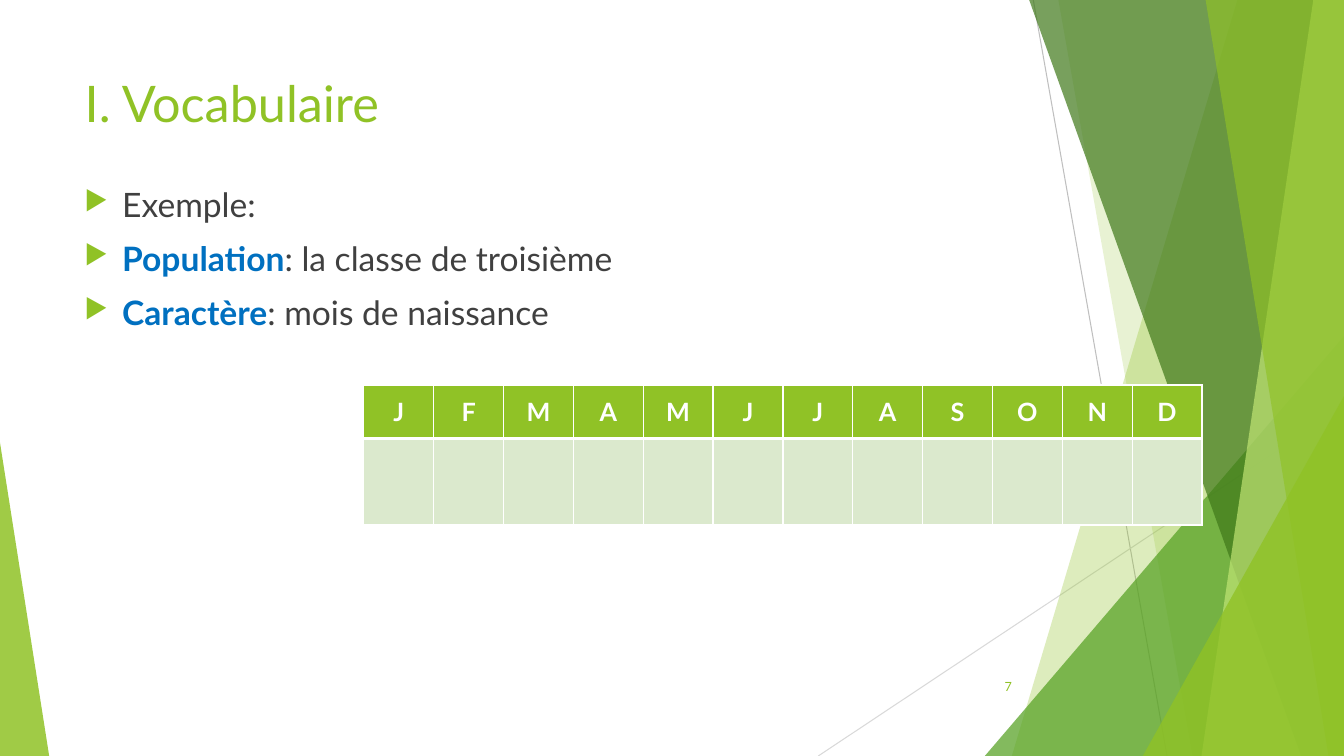
from dataclasses import dataclass

from lxml import etree
from pptx import Presentation
from pptx.dml.color import RGBColor
from pptx.enum import shapes, text
from pptx.oxml import ns
from pptx.util import Cm, Pt

COLORS = {
    "green": "90C226", "leaf": "54A021", "forest": "3F7819", "lime": "C0E474",
    "blue": "0070C0", "text": "404040", "white": "FFFFFF", "cell": "DBE9CD",
    "ray": "BFBFBF", "pale_ray": "D9D9D9",
}
FONT = "Lato"
WIDTH, HEIGHT = 33.87, 19.05
BLEED_TOP = -0.02


@dataclass(frozen=True)
class Ray:
    start: tuple[float, float]
    end: tuple[float, float]
    color: str


@dataclass(frozen=True)
class Panel:
    """A band reaching the right edge, with a slanted left side."""
    top_left: float
    bottom_left: float
    color: str
    opacity: int


@dataclass(frozen=True)
class Wedge:
    """A right triangle standing on the bottom edge."""
    left: float
    top: float
    width: float
    apex: int
    color: str
    opacity: int


DECOR = [
    Ray((26.04, 0), (29.41, HEIGHT), "ray"),
    Ray((WIDTH, 10.24), (20.62, HEIGHT), "pale_ray"),
    Panel(31.19, 25.5, "green", 30),
    Panel(26.67, 30.05, "green", 20),
    Wedge(24.82, 8.47, 9.05, 1, "leaf", 72),
    Panel(25.93, 32.79, "forest", 70),
    Panel(33.1, 30.28, "lime", 70),
    Panel(30.38, 33.48, "green", 65),
    Wedge(28.8, 9.98, 5.07, 1, "green", 80),
    Wedge(0, 11.15, 1.24, 0, "green", 85),
]
BULLETS = [
    [("Exemple:", "text", False)],
    [("Population", "blue", True), (": la classe de troisième", "text", False)],
    [("Caractère", "blue", True), (": mois de naissance", "text", False)],
]
MONTHS = "JFMAMJJASOND"


def rgb(name: str) -> RGBColor:
    return RGBColor.from_string(COLORS[name])


def add_xml(parent, tag: str, **attrs):
    return etree.SubElement(parent, ns.qn(tag), attrs)


def place(sp, left: float, top: float, width: float, height: float) -> None:
    box = {"left": left, "top": top, "width": width, "height": height}
    for name, value in box.items():
        setattr(sp, name, Cm(value))


def add_run(p, words: str, size: float, color: str, bold: bool = False) -> None:
    r = p.add_run()
    r.text = words
    for name, value in {"name": FONT, "size": Pt(size), "bold": bold}.items():
        setattr(r.font, name, value)
    r.font.color.rgb = rgb(color)


def paint(sp, color: str, opacity: int) -> None:
    sp.shadow.inherit = False
    sp.line.fill.background()
    sp.fill.solid()
    sp.fill.fore_color.rgb = rgb(color)
    srgb = sp.fill._xPr.find(".//" + ns.qn("a:srgbClr"))
    add_xml(srgb, "a:alpha", val=str(opacity * 1000))


def draw_ray(s, ray: Ray) -> None:
    ends = [Cm(v) for v in ray.start + ray.end]
    line = s.shapes.add_connector(shapes.MSO_CONNECTOR.STRAIGHT, *ends)
    line.line.width = Pt(0.75)
    line.line.color.rgb = rgb(ray.color)
    add_xml(line._element.spPr, "a:effectLst")


def draw_panel(s, panel: Panel) -> None:
    corners = [(WIDTH, BLEED_TOP), (WIDTH, HEIGHT), (panel.bottom_left, HEIGHT)]
    outline = s.shapes.build_freeform(Cm(panel.top_left), Cm(BLEED_TOP))
    outline.add_line_segments([(Cm(x), Cm(y)) for x, y in corners], close=True)
    paint(outline.convert_to_shape(), panel.color, panel.opacity)


def draw_wedge(s, wedge: Wedge) -> None:
    box = (wedge.left, wedge.top, wedge.width, HEIGHT - wedge.top)
    sp = s.shapes.add_shape(shapes.MSO_SHAPE.ISOSCELES_TRIANGLE, *map(Cm, box))
    sp.adjustments[0] = wedge.apex
    paint(sp, wedge.color, wedge.opacity)


def write_title(s) -> None:
    title = s.shapes.title
    place(title, 1.88, 1.7, 23.88, 3.66)
    tf = title.text_frame
    tf.auto_size = text.MSO_AUTO_SIZE.NONE
    tf.vertical_anchor = text.MSO_ANCHOR.TOP
    tf.paragraphs[0].alignment = text.PP_ALIGN.LEFT
    add_run(tf.paragraphs[0], "I. Vocabulaire", 36, "green")


def add_text_box(s, left: float, top: float, width: float, height: float):
    tf = s.shapes.add_textbox(*map(Cm, (left, top, width, height))).text_frame
    tf.word_wrap = True
    return tf


def write_bullets(s) -> None:
    tf = add_text_box(s, 1.88, 4.5, 23.88, 10.77)
    for i, runs in enumerate(BULLETS):
        p = tf.add_paragraph() if i else tf.paragraphs[0]
        p.space_before = Pt(10)
        pPr = p._p.get_or_add_pPr()
        pPr.set("marL", str(Cm(0.95)))
        pPr.set("indent", str(-Cm(0.95)))
        add_xml(add_xml(pPr, "a:buClr"), "a:srgbClr", val=COLORS["green"])
        add_xml(pPr, "a:buSzPct", val="80000")
        add_xml(pPr, "a:buChar", char="▶")
        for words, color, bold in runs:
            add_run(p, words, 24, color, bold)


def write_slide_number(s) -> None:
    tf = add_text_box(s, 23.85, 16.79, 1.9, 1.02)
    tf.vertical_anchor = text.MSO_ANCHOR.MIDDLE
    tf.paragraphs[0].alignment = text.PP_ALIGN.RIGHT
    add_run(tf.paragraphs[0], "7", 9, "green")


def style_cell(cell, fill: str, borders: dict[str, float]) -> None:
    tcPr = cell._tc.get_or_add_tcPr()
    for side, width in borders.items():
        ln = add_xml(tcPr, f"a:ln{side}", w=str(Pt(width)))
        add_xml(add_xml(ln, "a:solidFill"), "a:srgbClr", val=COLORS["white"])
    cell.fill.solid()
    cell.fill.fore_color.rgb = rgb(fill)


def add_month_table(s) -> None:
    column, heights = 1.76, (1.35, 2.18)
    box = (9.17, 9.7, column * len(MONTHS), sum(heights))
    table = s.shapes.add_table(2, len(MONTHS), *map(Cm, box)).table
    for row, height in zip(table.rows, heights):
        row.height = Cm(height)
    for i, month in enumerate(MONTHS):
        table.columns[i].width = Cm(column)
        head = table.cell(0, i)
        head.vertical_anchor = text.MSO_ANCHOR.MIDDLE
        p = head.text_frame.paragraphs[0]
        p.alignment = text.PP_ALIGN.CENTER
        add_run(p, month, 18, "white", True)
        style_cell(head, "green", {"L": 1, "R": 1, "T": 1, "B": 3})
        style_cell(table.cell(1, i), "cell", {"L": 1, "R": 1, "T": 3, "B": 1})


def main() -> None:
    prs = Presentation()
    prs.slide_width, prs.slide_height = Cm(WIDTH), Cm(HEIGHT)
    s = prs.slides.add_slide(prs.slide_layouts[5])
    draw = {Ray: draw_ray, Panel: draw_panel, Wedge: draw_wedge}
    for item in DECOR:
        draw[type(item)](s, item)
    write_title(s)
    write_slide_number(s)
    write_bullets(s)
    add_month_table(s)
    prs.save("out.pptx")


if __name__ == "__main__":
    main()
